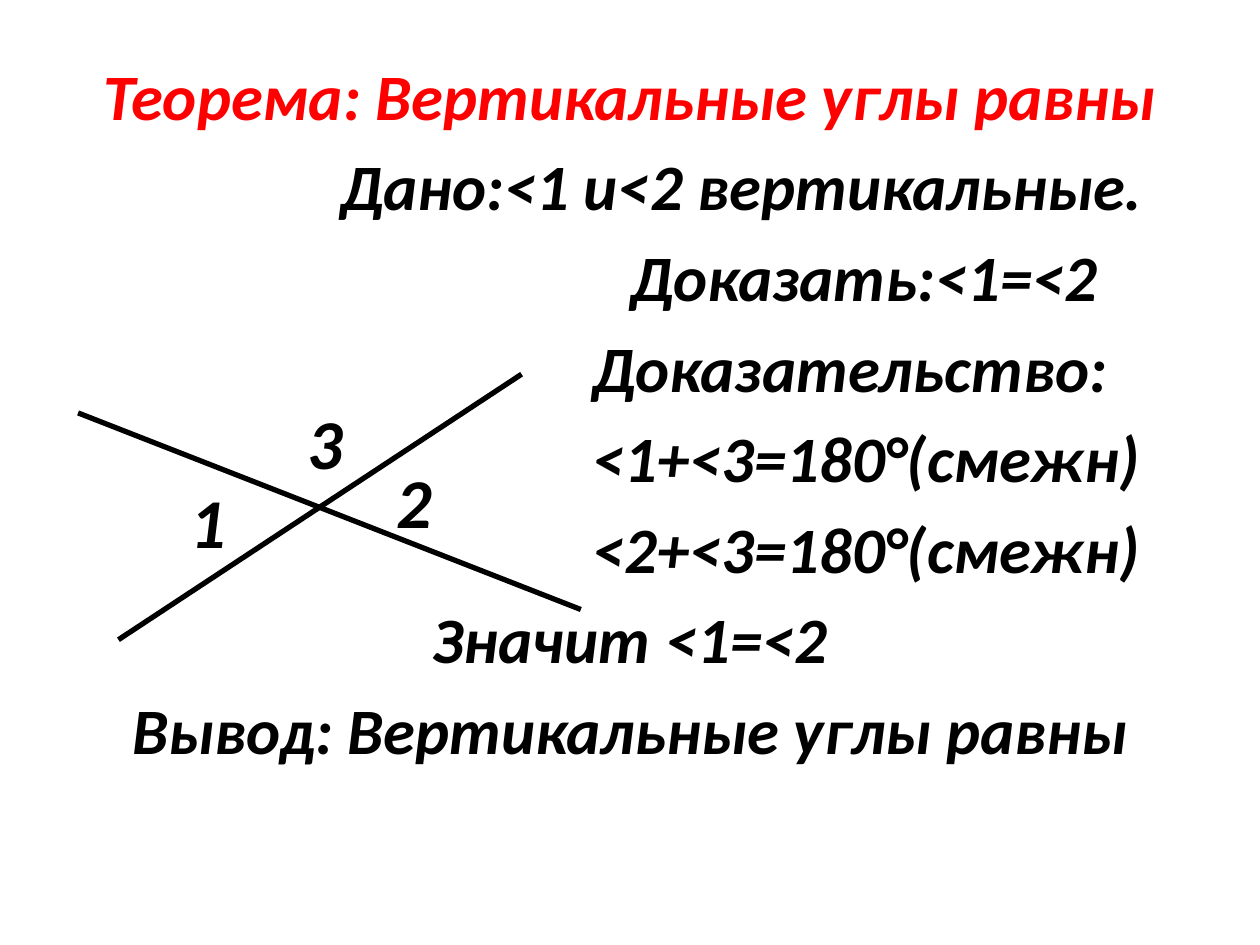
from dataclasses import dataclass

import pptx
import pptx.dml.color
import pptx.enum.shapes
import pptx.enum.text
import pptx.oxml.ns
import pptx.util
from lxml import etree

COLORS = {"theorem": "FF0000", "ink": "000000"}
FONT = "Calibri"
SLIDE_WIDTH = pptx.util.Inches(10)
SLIDE_HEIGHT = pptx.util.Inches(7.5)


@dataclass
class ProofLine:
    text: str
    indent: float | None = None
    color: str = "ink"


@dataclass
class Ray:
    start: tuple[float, float]
    end: tuple[float, float]


@dataclass
class AngleLabel:
    text: str
    left: float
    top: float


PROOF = [
    ProofLine("Теорема: Вертикальные углы равны", color="theorem"),
    ProofLine("Дано:<1 и<2 вертикальные.", 0.21),
    ProofLine("Доказать:<1=<2", 0.44),
    ProofLine("Доказательство:", 0.41),
    ProofLine("<1+<3=180°(смежн)", 0.41),
    ProofLine("<2+<3=180°(смежн)", 0.41),
    ProofLine("Значит <1=<2"),
    ProofLine("Вывод: Вертикальные углы равны"),
]
RAYS = [
    Ray((0.094, 0.677), (0.414, 0.396)),
    Ray((0.062, 0.437), (0.461, 0.645)),
]
ANGLES = [
    AngleLabel("1", 0.141, 0.5),
    AngleLabel("2", 0.305, 0.479),
    AngleLabel("3", 0.234, 0.416),
]


def across(share: float) -> int:
    return round(SLIDE_WIDTH * share)


def down(share: float) -> int:
    return round(SLIDE_HEIGHT * share)


def add_run(paragraph, text: str, size: float, color: str) -> None:
    run = paragraph.add_run()
    run.text = text
    run.font.name = FONT
    run.font.size = pptx.util.Pt(size)
    run.font.bold = True
    run.font.italic = True
    run.font.color.rgb = pptx.dml.color.RGBColor.from_string(COLORS[color])


def write_proof(body, lines: list[ProofLine]) -> None:
    body.left, body.top = across(0.05), down(0.052)
    body.width, body.height = across(0.9), down(0.841)
    frame = body.text_frame
    frame.auto_size = pptx.enum.text.MSO_AUTO_SIZE.NONE
    for number, line in enumerate(lines):
        paragraph = frame.add_paragraph() if number else frame.paragraphs[0]
        centred = line.indent is None
        align = pptx.enum.text.PP_ALIGN
        paragraph.alignment = align.CENTER if centred else align.LEFT
        properties = paragraph._p.get_or_add_pPr()
        properties.set("marL", str(across(line.indent or 0)))
        properties.set("indent", "0")
        etree.SubElement(properties, pptx.oxml.ns.qn("a:buNone"))
        add_run(paragraph, line.text, 37, line.color)


def draw_ray(slide, ray: Ray) -> None:
    connector = slide.shapes.add_connector(
        pptx.enum.shapes.MSO_CONNECTOR.STRAIGHT,
        across(ray.start[0]), down(ray.start[1]),
        across(ray.end[0]), down(ray.end[1]),
    )
    connector.line.width = pptx.util.Pt(3)
    connector.line.color.rgb = pptx.dml.color.RGBColor.from_string(COLORS["ink"])
    etree.SubElement(connector._element.spPr, pptx.oxml.ns.qn("a:effectLst"))


def draw_label(slide, label: AngleLabel) -> None:
    box = slide.shapes.add_textbox(
        across(label.left), down(label.top), across(0.049), down(0.103)
    )
    box.text_frame.word_wrap = False
    box.text_frame.auto_size = pptx.enum.text.MSO_AUTO_SIZE.SHAPE_TO_FIT_TEXT
    add_run(box.text_frame.paragraphs[0], label.text, 40, "ink")


def main() -> None:
    deck = pptx.Presentation()
    deck.slide_width, deck.slide_height = SLIDE_WIDTH, SLIDE_HEIGHT
    slide = deck.slides.add_slide(deck.slide_layouts[1])
    empty_title = slide.shapes.title._element
    empty_title.getparent().remove(empty_title)
    write_proof(slide.placeholders[1], PROOF)
    for ray in RAYS:
        draw_ray(slide, ray)
    for angle in ANGLES:
        draw_label(slide, angle)
    deck.save("out.pptx")


if __name__ == "__main__":
    main()
